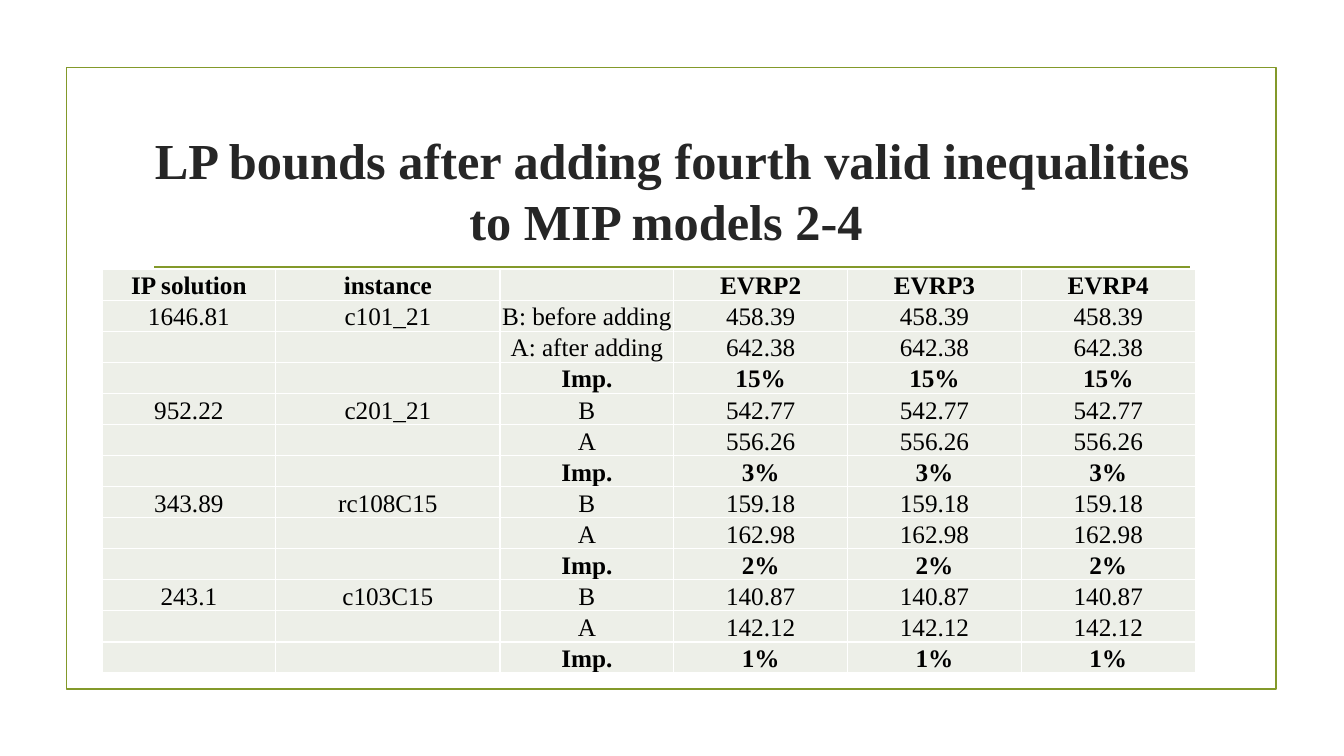
from dataclasses import dataclass

from lxml import etree
from pptx import Presentation
from pptx.dml.color import RGBColor
from pptx.enum.shapes import MSO_CONNECTOR, MSO_SHAPE
from pptx.enum.text import MSO_ANCHOR, PP_ALIGN
from pptx.oxml.ns import qn
from pptx.slide import Slide
from pptx.table import _Cell
from pptx.text.text import TextFrame
from pptx.util import Cm, Pt

RECTANGLE = MSO_SHAPE.RECTANGLE
STRAIGHT = MSO_CONNECTOR.STRAIGHT
MIDDLE, BOTTOM = MSO_ANCHOR.MIDDLE, MSO_ANCHOR.BOTTOM
CENTER = PP_ALIGN.CENTER

FONT = "Times New Roman"
OLIVE, INK, BLACK, WHITE, CELL_FILL = "83992A", "262626", "000000", "FFFFFF", "EDEFE8"
TITLE = "LP bounds after adding fourth valid inequalities to MIP models 2-4 "
MODELS = ["EVRP2", "EVRP3", "EVRP4"]
COLUMN_WIDTHS = [4.38, 5.65, 4.38, 4.38, 4.38, 4.38]
ROW_HEIGHT = 0.78


@dataclass
class Instance:
    """LP bounds of one instance, equal for all three models."""
    ip_solution: str
    name: str
    before: str
    after: str
    improvement: str
    before_label: str = "B"
    after_label: str = "A"


@dataclass
class Row:
    texts: list[str]
    bold: bool = False


INSTANCES = [
    Instance("1646.81", "c101_21", "458.39", "642.38", "15%",
             "B: before adding", "A: after adding"),
    Instance("952.22", "c201_21", "542.77", "556.26", "3%"),
    Instance("343.89", "rc108C15", "159.18", "162.98", "2%"),
    Instance("243.1", "c103C15", "140.87", "142.12", "1%"),
]


def color(value: str) -> RGBColor:
    return RGBColor.from_string(value)


def write_centered(frame: TextFrame, text: str, size: float, ink: str, bold: bool) -> None:
    paragraph = frame.paragraphs[0]
    paragraph.alignment = CENTER
    run = paragraph.add_run()
    run.text = text
    run.font.name = FONT
    run.font.size = Pt(size)
    run.font.bold = bold
    run.font.color.rgb = color(ink)


def draw_frame(slide: Slide) -> None:
    frame = slide.shapes.add_shape(RECTANGLE, Cm(1.68), Cm(1.7), Cm(30.48), Cm(15.67))
    frame.shadow.inherit = False
    frame.fill.background()
    frame.line.color.rgb = color(OLIVE)
    frame.line.width = Pt(1.25)


def draw_title_rule(slide: Slide) -> None:
    rule = slide.shapes.add_connector(STRAIGHT, Cm(3.89), Cm(6.73), Cm(30), Cm(6.73))
    rule.line.color.rgb = color(OLIVE)
    rule.line.width = Pt(1.25)
    etree.SubElement(rule._element.spPr, qn("a:effectLst"))


def draw_title(slide: Slide) -> None:
    title = slide.shapes.add_textbox(Cm(3.61), Cm(2.97), Cm(26.67), Cm(3.63))
    title.text_frame.word_wrap = True
    title.text_frame.vertical_anchor = MIDDLE
    write_centered(title.text_frame, TITLE, 36, INK, True)


def set_borders(cell: _Cell) -> None:
    properties = cell._tc.get_or_add_tcPr()
    for side in ("lnL", "lnR", "lnT", "lnB"):
        border = etree.SubElement(properties, qn(f"a:{side}"), w=str(Pt(1)))
        fill = etree.SubElement(border, qn("a:solidFill"))
        etree.SubElement(fill, qn("a:srgbClr"), val=WHITE)


def fill_cell(cell: _Cell, text: str, bold: bool) -> None:
    cell.margin_left = cell.margin_right = cell.margin_top = Cm(0.02)
    cell.margin_bottom = 0
    cell.vertical_anchor = BOTTOM
    set_borders(cell)
    cell.fill.solid()
    cell.fill.fore_color.rgb = color(CELL_FILL)
    if text:
        write_centered(cell.text_frame, text, 18, BLACK, bold)
    else:
        # A small end mark keeps an empty cell from stretching its row
        etree.SubElement(cell.text_frame.paragraphs[0]._p, qn("a:endParaRPr"), sz="1200")


def bound_rows() -> list[Row]:
    rows = [Row(["IP solution", "instance", "", *MODELS], True)]
    for item in INSTANCES:
        rows += [
            Row([item.ip_solution, item.name, item.before_label]
                + [item.before] * len(MODELS)),
            Row(["", "", item.after_label] + [item.after] * len(MODELS)),
            Row(["", "", "Imp."] + [item.improvement] * len(MODELS), True),
        ]
    return rows


def draw_bounds(slide: Slide) -> None:
    rows = bound_rows()
    bounds = slide.shapes.add_table(
        len(rows), len(COLUMN_WIDTHS), Cm(2.57), Cm(6.78),
        Cm(sum(COLUMN_WIDTHS)), Cm(ROW_HEIGHT * len(rows))).table
    bounds.first_row = bounds.horz_banding = False
    for column, width in zip(bounds.columns, COLUMN_WIDTHS):
        column.width = Cm(width)
    for table_row, row in zip(bounds.rows, rows):
        table_row.height = Cm(ROW_HEIGHT)
        for cell, text in zip(table_row.cells, row.texts):
            fill_cell(cell, text, row.bold)


def main() -> None:
    presentation = Presentation()
    presentation.slide_width, presentation.slide_height = Cm(33.87), Cm(19.05)
    slide = presentation.slides.add_slide(presentation.slide_layouts[6])
    draw_frame(slide)
    draw_title_rule(slide)
    draw_title(slide)
    draw_bounds(slide)
    presentation.save("out.pptx")


if __name__ == "__main__":
    main()
